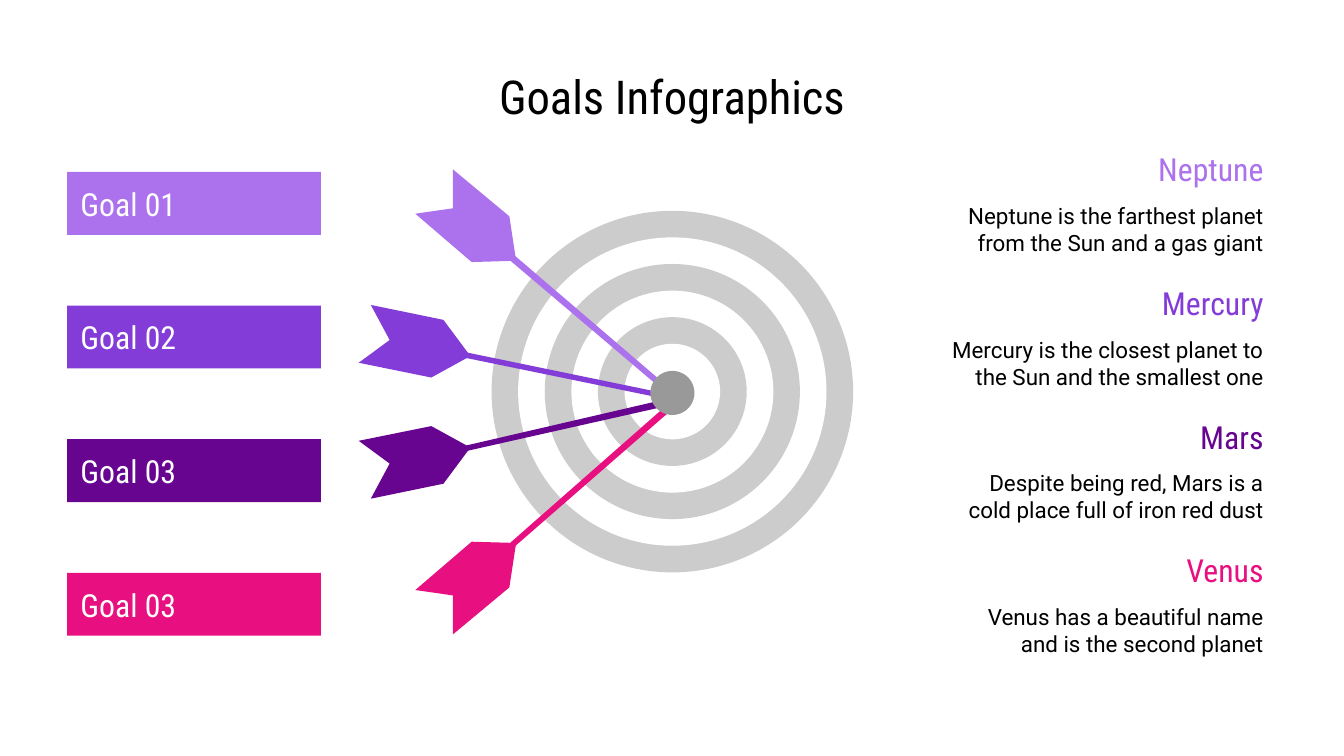
from pptx import Presentation
from pptx.dml.color import RGBColor
from pptx.enum.shapes import MSO_SHAPE as Shape
from pptx.enum.text import MSO_ANCHOR as Anchor, PP_ALIGN as Align
from pptx.util import Pt

COLORS = {
    "lilac": "AC71EC", "violet": "833CD8", "purple": "670591", "pink": "E81080",
    "ring": "CCCCCC", "hub": "999999", "white": "FFFFFF", "black": "000000",
}
HEAD, BODY = "Roboto Condensed", "Roboto"

# Goal label, colour, planet, description
GOALS = [
    ("Goal 01", "lilac", "Neptune",
     "Neptune is the farthest planet from the Sun and a gas giant"),
    ("Goal 02", "violet", "Mercury",
     "Mercury is the closest planet to the Sun and the smallest one"),
    ("Goal 03", "purple", "Mars",
     "Despite being red, Mars is a cold place full of iron red dust"),
    ("Goal 03", "pink", "Venus",
     "Venus has a beautiful name\vand is the second planet"),
]

# Arrow outlines in points; the lower vanes mirror the upper ones
MIRROR = 215.3
STEEP = [(242.6, 90.7), (242.6, 111.6), (222.5, 114.5),
         (252.7, 140.4), (276.5, 139.7), (272.9, 115.9)]
FLAT = [(198.7, 163.4), (208.8, 182.2), (192.2, 194.4),
        (231.1, 202.3), (252, 190.8), (237.6, 171.4)]
VANES = [STEEP, FLAT] + [[(x, 2 * MIRROR - y) for x, y in vane]
                         for vane in (FLAT, STEEP)]
SHAFTS = [
    [(272.2, 133.9), (270, 136.8), (360, 213.1), (362.2, 211)],
    [(245.5, 187.9), (244.8, 190.8), (360.7, 214.6), (360.7, 211.7)],
    [(245.5, 242.6), (244.8, 239.8), (360, 213.1), (360.7, 216.7)],
    [(272.2, 295.9), (270, 293.8), (359.3, 215.3), (361.4, 218.2)],
]

deck = Presentation()
deck.slide_width, deck.slide_height = Pt(720), Pt(405)
slide = deck.slides.add_slide(deck.slide_layouts[6])
shapes = slide.shapes


def paint(shape, color):
    shape.shadow.inherit = False
    shape.fill.solid()
    shape.fill.fore_color.rgb = RGBColor.from_string(COLORS[color])
    shape.line.fill.background()


def write(shape, text, size, font, color, align):
    frame = shape.text_frame
    frame.word_wrap = True
    frame.vertical_anchor = Anchor.MIDDLE
    frame.margin_left = frame.margin_right = Pt(7.2)
    frame.margin_top = frame.margin_bottom = Pt(7.2)
    frame.text = text
    para = frame.paragraphs[0]
    para.alignment = align
    for run in para.runs:
        run.font.size = Pt(size)
        run.font.name = font
        run.font.color.rgb = RGBColor.from_string(COLORS[color])


# Title
title = shapes.add_textbox(Pt(36), Pt(32.4), Pt(648), Pt(38.2))
write(title, "Goals Infographics", 25, HEAD, "black", Align.CENTER)

# Target rings, from the outside in
for i in range(6):
    size = 193.7 - 28.5 * i
    ring = shapes.add_shape(Shape.OVAL, Pt(360.2 - size / 2), Pt(209.8 - size / 2),
                            Pt(size), Pt(size))
    paint(ring, "white" if i % 2 else "ring")

# Goal bars and planet texts, one row per goal
for i, (goal, color, planet, about) in enumerate(GOALS):
    top = 92.1 + 71.6 * i
    bar = shapes.add_shape(Shape.RECTANGLE, Pt(36), Pt(top), Pt(136), Pt(33.7))
    paint(bar, color)
    write(bar, goal, 17, HEAD, "white", Align.LEFT)
    name = shapes.add_textbox(Pt(498.2), Pt(top - 18.3), Pt(185.8), Pt(33.7))
    write(name, planet, 17, HEAD, color, Align.RIGHT)
    note = shapes.add_textbox(Pt(498.2), Pt(top + 9), Pt(185.8), Pt(43.2))
    write(note, about, 12, BODY, "black", Align.RIGHT)

# Arrows: shaft, then vane
for (_, color, _, _), shaft, vane in zip(GOALS, SHAFTS, VANES):
    for outline in (shaft, vane):
        dots = [(Pt(x), Pt(y)) for x, y in outline]
        path = shapes.build_freeform(*dots[0])
        path.add_line_segments(dots[1:], close=True)
        paint(path.convert_to_shape(), color)

# Hub over the arrow tips
hub = shapes.add_shape(Shape.OVAL, Pt(348.4), Pt(198.7), Pt(23.6), Pt(23.6))
paint(hub, "hub")

deck.save("out.pptx")
